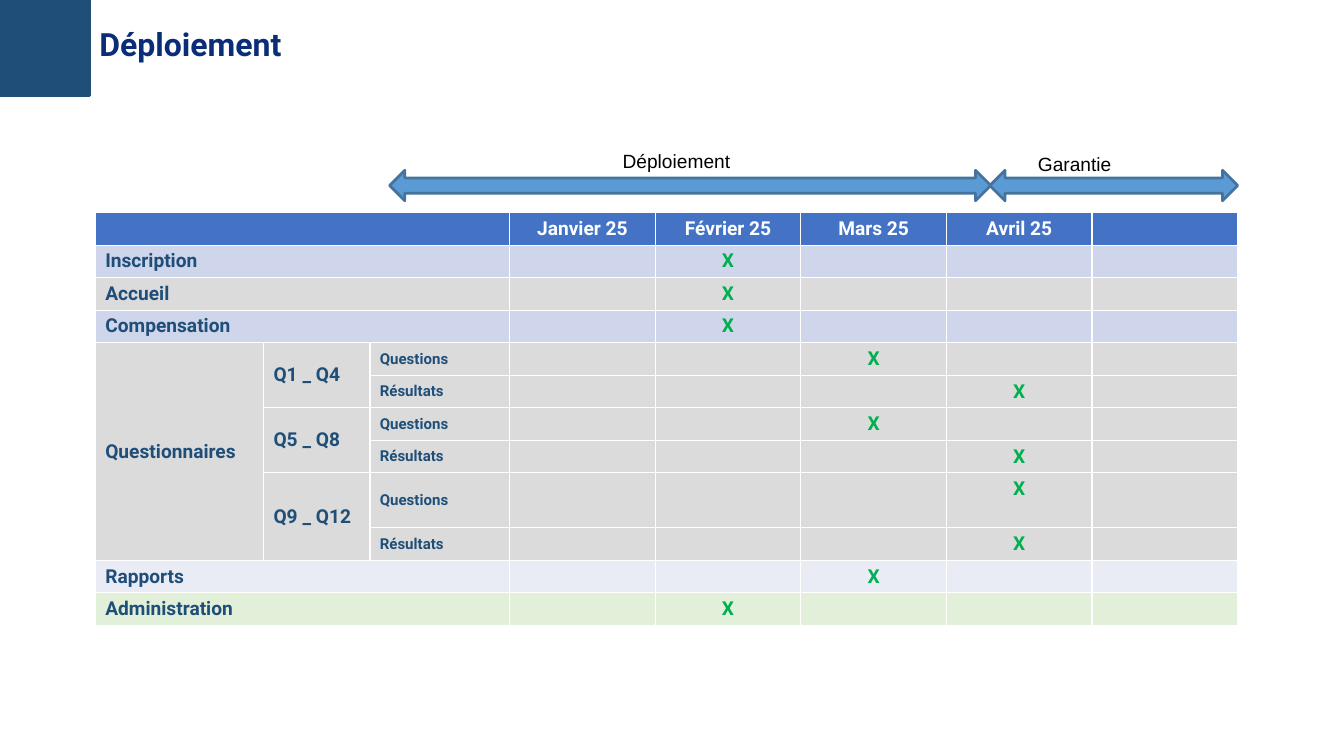
from dataclasses import dataclass

from pptx import Presentation
from pptx.dml.color import RGBColor as Rgb
from pptx.enum.shapes import MSO_SHAPE as Shape
from pptx.enum.text import MSO_ANCHOR as Anchor, MSO_AUTO_SIZE as AutoSize, PP_ALIGN as Align
from pptx.util import Inches, Pt


@dataclass(frozen=True)
class Theme:
    heading_font: str = "Roboto"
    label_font: str = "Arial"
    title_size: float = 23.4
    text_size: float = 14
    detail_size: float = 11
    title: str = "0B2D78"
    navy: str = "1F4E79"
    header: str = "4472C4"
    white: str = "FFFFFF"
    black: str = "000000"
    mark: str = "00B050"
    blue_row: str = "CFD5EA"
    grey_row: str = "DBDBDB"
    pale_row: str = "E9EBF5"
    green_row: str = "E2F0D9"
    arrow: str = "5B9BD5"
    arrow_line: str = "43739E"


THEME = Theme()
JANUARY, FEBRUARY, MARCH, APRIL = range(3, 7)
MONTHS = ["Janvier 25", "Février 25", "Mars 25", "Avril 25"]
COLUMN_WIDTHS = [1.71, 1.08, 1.42] + [1.48] * 5
ROW_HEIGHT, TALL_ROW_HEIGHT, TALL_ROW = 0.33, 0.56, 8

# Three label columns, row fill, month column of the mark
TASKS = [
    (("Inscription", "", ""), THEME.blue_row, FEBRUARY),
    (("Accueil", "", ""), THEME.grey_row, FEBRUARY),
    (("Compensation", "", ""), THEME.blue_row, FEBRUARY),
    (("Questionnaires", "Q1 _ Q4", "Questions"), THEME.grey_row, MARCH),
    (("", "", "Résultats"), THEME.grey_row, APRIL),
    (("", "Q5 _ Q8", "Questions"), THEME.grey_row, MARCH),
    (("", "", "Résultats"), THEME.grey_row, APRIL),
    (("", "Q9 _ Q12", "Questions"), THEME.grey_row, APRIL),
    (("", "", "Résultats"), THEME.grey_row, APRIL),
    (("Rapports", "", ""), THEME.pale_row, MARCH),
    (("Administration", "", ""), THEME.green_row, FEBRUARY),
]


def set_all(target, values):
    for name, value in values.items():
        setattr(target, name, value)


def paint(part, color):
    part.fill.solid()
    part.fill.fore_color.rgb = Rgb.from_string(color)


def write(para, text, color, size=THEME.text_size, font=THEME.heading_font, bold=True):
    span = para.add_run()
    span.text = text
    set_all(span.font, {"name": font, "size": Pt(size), "bold": bold})
    span.font.color.rgb = Rgb.from_string(color)


def add_solid(page, kind, box, fill, line):
    shape = page.shapes.add_shape(kind, *map(Inches, box))
    shape.shadow.inherit = False
    paint(shape, fill)
    shape.line.color.rgb = Rgb.from_string(line)
    shape.line.width = Pt(2)


def add_heading(page, box):
    """Place the corner block and, to its right, the title."""
    left, top, width, height = box
    block = 0.91
    add_solid(page, Shape.RECTANGLE, (left, top, block, 0.97), THEME.navy, THEME.navy)
    title = page.shapes.title
    set_all(title, {"left": Inches(left + block), "top": Inches(top),
                    "width": Inches(width - block), "height": Inches(height)})
    frame = title.text_frame
    set_all(frame, {"word_wrap": True, "auto_size": AutoSize.NONE,
                    "vertical_anchor": Anchor.MIDDLE})
    set_all(frame, {f"margin_{side}": Inches(0.1)
                    for side in ("left", "right", "top", "bottom")})
    para = frame.paragraphs[0]
    set_all(para, {"alignment": Align.LEFT, "line_spacing": 0.9})
    write(para, "Déploiement", THEME.title, THEME.title_size)


def add_phase(page, box, name, label_box):
    """Place a double arrow, and its label relative to the arrow."""
    add_solid(page, Shape.LEFT_RIGHT_ARROW, box, THEME.arrow, THEME.arrow_line)
    shift_x, shift_y, width, height = label_box
    label = page.shapes.add_textbox(Inches(box[0] + shift_x), Inches(box[1] + shift_y),
                                    Inches(width), Inches(height))
    set_all(label.text_frame, {"word_wrap": False, "auto_size": AutoSize.SHAPE_TO_FIT_TEXT})
    write(label.text_frame.paragraphs[0], name, THEME.black, font=THEME.label_font, bold=False)


def fill_cell(cell, fill, text="", color=THEME.white, size=THEME.text_size, align=Align.LEFT):
    paint(cell, fill)
    cell.vertical_anchor = Anchor.MIDDLE
    if text:
        para = cell.text_frame.paragraphs[0]
        para.alignment = align
        write(para, text, color, size)
    else:
        set_all(cell, {"margin_top": 0, "margin_bottom": 0})


def merge_labels(table):
    for row, (labels, _, _) in enumerate(TASKS, start=1):
        if not any(labels[1:]):
            table.cell(row, 0).merge(table.cell(row, 2))
        elif labels[1]:
            table.cell(row, 1).merge(table.cell(row + 1, 1))
    table.cell(0, 0).merge(table.cell(0, 2))
    table.cell(4, 0).merge(table.cell(9, 0))


def add_schedule(page, box):
    table = page.shapes.add_table(len(TASKS) + 1, len(COLUMN_WIDTHS),
                                  *map(Inches, box)).table
    for column, width in zip(table.columns, COLUMN_WIDTHS):
        column.width = Inches(width)
    for index, row in enumerate(table.rows):
        row.height = Inches(TALL_ROW_HEIGHT if index == TALL_ROW else ROW_HEIGHT)

    header = ["", "", "", *MONTHS, ""]
    for column, month in enumerate(header):
        fill_cell(table.cell(0, column), THEME.header, month, align=Align.CENTER)
    for row, (labels, fill, marked) in enumerate(TASKS, start=1):
        for column, label in enumerate(labels):
            size = THEME.detail_size if column == 2 else THEME.text_size
            fill_cell(table.cell(row, column), fill, label, THEME.navy, size)
        for column in range(JANUARY, len(COLUMN_WIDTHS)):
            text = "X" if column == marked else ""
            fill_cell(table.cell(row, column), fill, text, THEME.mark, align=Align.CENTER)
    table.cell(TALL_ROW, APRIL).vertical_anchor = Anchor.TOP
    merge_labels(table)


def main():
    deck = Presentation()
    set_all(deck, {"slide_width": Inches(13.66), "slide_height": Inches(7.68)})
    page = deck.slides.add_slide(deck.slide_layouts.get_by_name("Title Only"))
    add_heading(page, (0, 0, 12.85, 0.93))
    add_schedule(page, (0.97, 2.16, sum(COLUMN_WIDTHS), 4.19))
    add_phase(page, (3.96, 1.73, 6.11, 0.31), "Déploiement", (2.27, -0.26, 1.3, 0.34))
    add_phase(page, (10.06, 1.73, 2.52, 0.31), "Garantie", (0.39, -0.23, 0.95, 0.34))
    deck.save("out.pptx")


if __name__ == "__main__":
    main()
